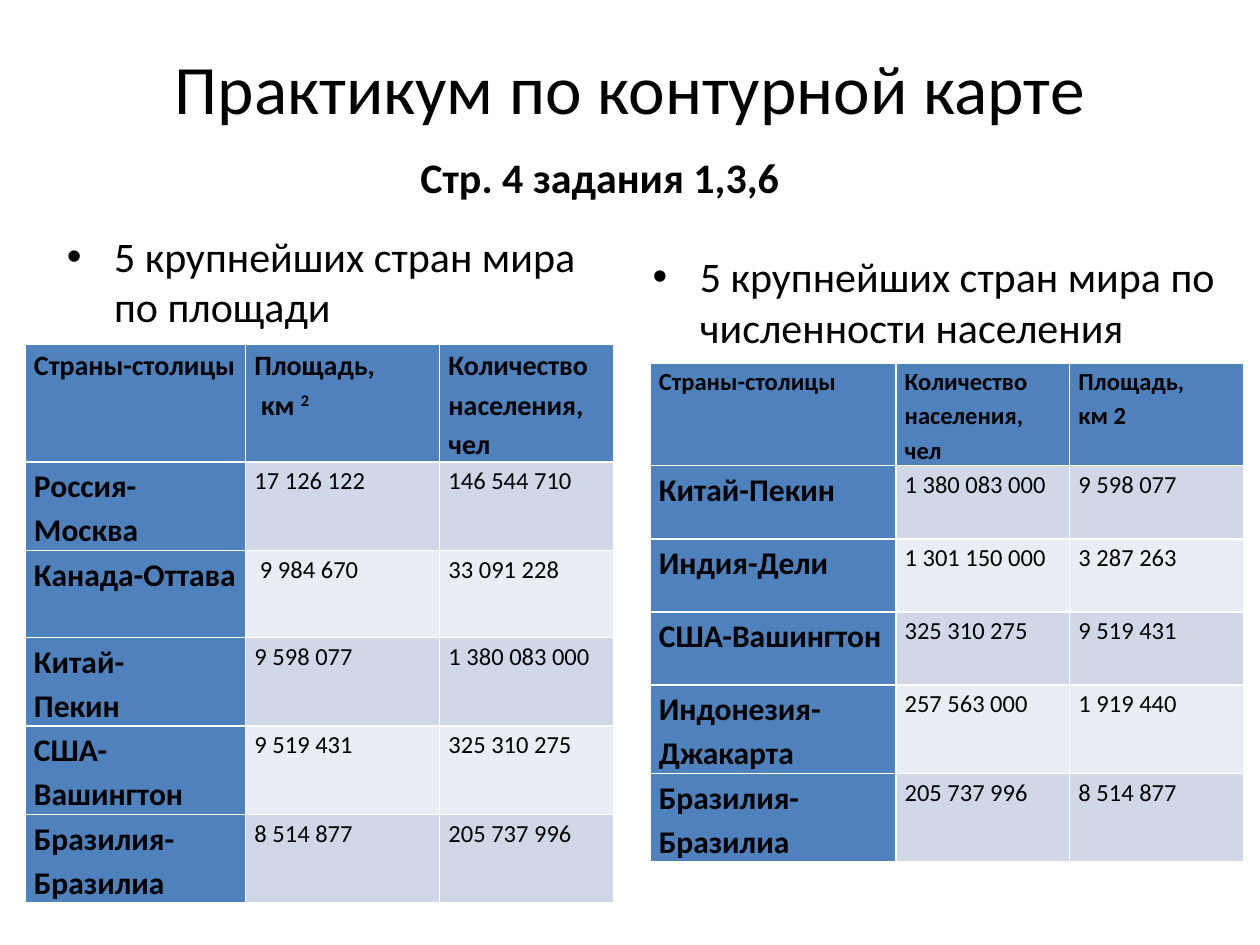
"""Build a slide comparing the five largest countries by area and by population."""
from pptx import Presentation
from pptx.dml.color import RGBColor
from pptx.enum.text import MSO_ANCHOR, MSO_AUTO_SIZE, PP_ALIGN
from pptx.util import Inches, Pt

CENTER, LEFT = PP_ALIGN.CENTER, PP_ALIGN.LEFT
TOP, MIDDLE = MSO_ANCHOR.TOP, MSO_ANCHOR.MIDDLE
NO_AUTOFIT = MSO_AUTO_SIZE.NONE
BLACK = RGBColor(0x00, 0x00, 0x00)
BLUE = RGBColor(0x4F, 0x81, 0xBD)
BANDS = [RGBColor(0xD0, 0xD8, 0xE8), RGBColor(0xE9, 0xED, 0xF4)]
FONT = "Calibri"
COMPARISON_LAYOUT = 4


def add_run(paragraph, text, size, bold):
    run = paragraph.add_run()
    run.text = text
    run.font.name = FONT
    run.font.size = Pt(size)
    run.font.bold = bold
    run.font.color.rgb = BLACK
    return run


def add_countries(slide, box, widths, heights, header_size, rows):
    table = slide.shapes.add_table(len(rows), len(widths), *map(Inches, box)).table
    table.first_col = True
    for column, width in zip(table.columns, widths):
        column.width = Inches(width)
    for row, height in zip(table.rows, heights):
        row.height = Inches(height)
    for r, values in enumerate(rows):
        for c, value in enumerate(values):
            cell = table.cell(r, c)
            label = r == 0 or c == 0
            cell.fill.solid()
            cell.fill.fore_color.rgb = BLUE if label else BANDS[(r - 1) % 2]
            cell.margin_left = cell.margin_right = Inches(0.07)
            cell.margin_top = cell.margin_bottom = 0
            size = header_size if r == 0 else 18 if c == 0 else 14
            for i, line in enumerate(value.split("\n")):
                frame = cell.text_frame
                paragraph = frame.add_paragraph() if i else frame.paragraphs[0]
                paragraph.line_spacing = 1.15
                base, mark, power = line.partition("^")
                add_run(paragraph, base, size, label)
                if mark:
                    raised = add_run(paragraph, power, size, label)
                    raised.font._element.set("baseline", "30000")


prs = Presentation()
prs.slide_width, prs.slide_height = Inches(10), Inches(7.5)
slide = prs.slides.add_slide(prs.slide_layouts[COMPARISON_LAYOUT])

headings = {
    0: ("Практикум по контурной карте", (0.5, 0.3, 9, 0.77), 39.6, False, CENTER, MIDDLE),
    1: ("Стр. 4 задания 1,3,6", (1.69, 1.15, 6.14, 0.7), 24, True, CENTER, TOP),
    2: ("5 крупнейших стран мира по площади", (0.43, 1.78, 4.42, 4.32), 24, False, LEFT, TOP),
    4: ("5 крупнейших стран мира по численности населения",
        (5.08, 1.94, 4.8, 5.28), 24, False, LEFT, TOP),
}
for holder in list(slide.placeholders):
    index = holder.placeholder_format.idx
    if index not in headings:
        holder._element.getparent().remove(holder._element)
        continue
    text, box, size, bold, align, anchor = headings[index]
    holder.left, holder.top, holder.width, holder.height = map(Inches, box)
    frame = holder.text_frame
    frame.auto_size = NO_AUTOFIT
    frame.vertical_anchor = anchor
    frame.paragraphs[0].alignment = align
    add_run(frame.paragraphs[0], text, size, bold)

by_area = [
    ("Страны-столицы", "Площадь,\n км ^2", "Количество населения, чел"),
    ("Россия-Москва", "17 126 122", "146 544 710"),
    ("Канада-Оттава", " 9 984 670", "33 091 228"),
    ("Китай-\nПекин", "9 598 077", "1 380 083 000"),
    ("США-Вашингтон", "9 519 431", "325 310 275"),
    ("Бразилия-Бразилиа", "8 514 877", "205 737 996"),
]
by_population = [
    ("Страны-столицы", "Количество населения, чел", "Площадь,\nкм 2"),
    ("Китай-Пекин", "1 380 083 000", "9 598 077"),
    ("Индия-Дели", "1 301 150 000", "3 287 263"),
    ("США-Вашингтон", "325 310 275", "9 519 431"),
    ("Индонезия-Джакарта", "257 563 000", "1 919 440"),
    ("Бразилия-Бразилиа", "205 737 996", "8 514 877"),
]
add_countries(slide, (0.2, 2.73, 4.67, 4.37), (1.75, 1.54, 1.38),
              [0.92] + [0.69] * 5, 16, by_area)
add_countries(slide, (5.16, 2.88, 4.7, 3.93), (1.95, 1.38, 1.38),
              [0.79] + [0.58] * 3 + [0.7] * 2, 14, by_population)

prs.save("out.pptx")
